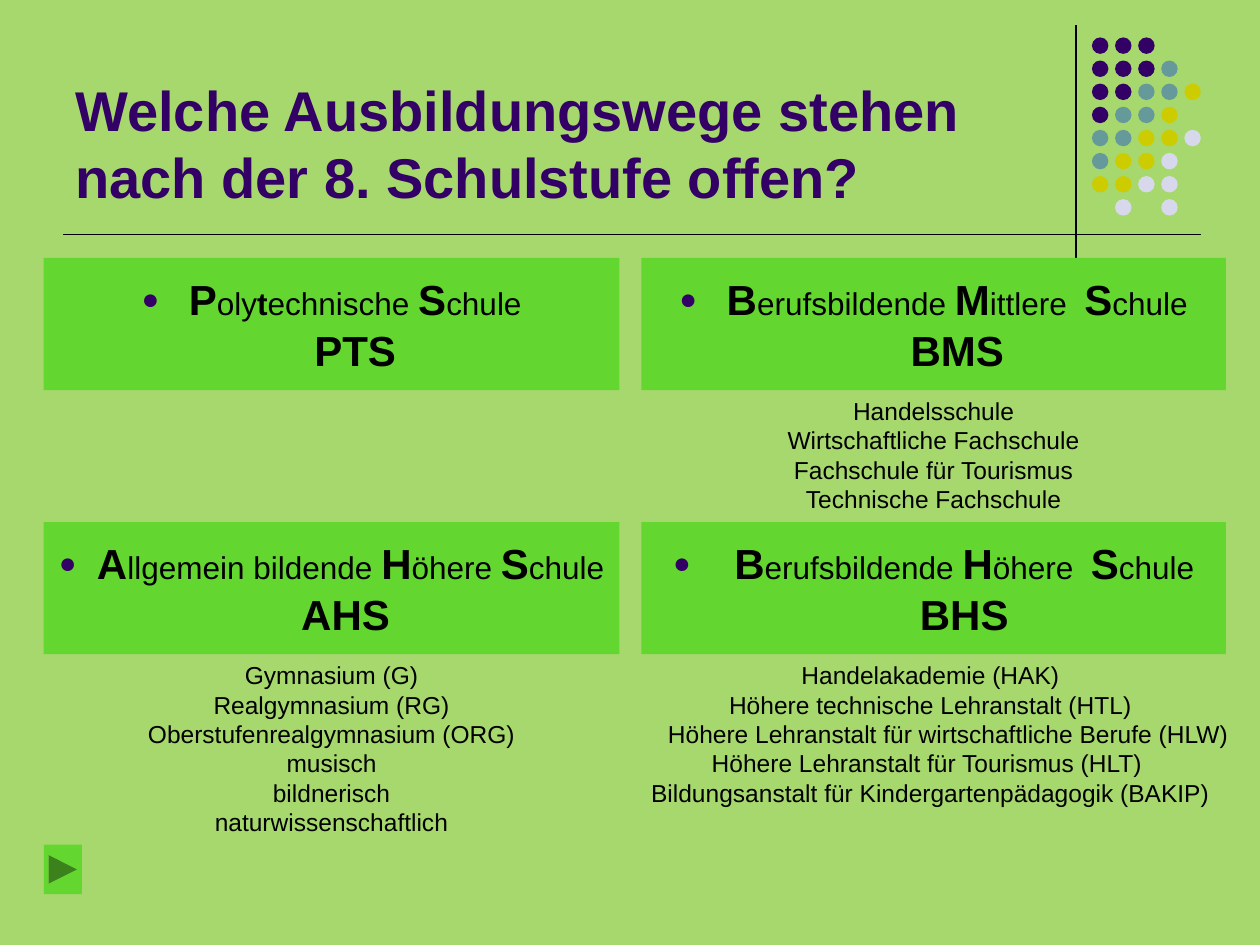
import copy
import pptx
import pptx.dml.color
import pptx.enum.shapes
import pptx.enum.text
import pptx.oxml
import pptx.oxml.ns
import pptx.util
from lxml import etree

Pt = pptx.util.Pt
Shape = pptx.enum.shapes.MSO_SHAPE
Align = pptx.enum.text.PP_ALIGN
Anchor = pptx.enum.text.MSO_ANCHOR
qn = pptx.oxml.ns.qn
GREEN, DARK, BLACK = "63D72F", "330066", "000000"


def tint(part, color):
    """Give a fill, font or line one solid colour."""
    if hasattr(part, "solid"):
        part.solid()
    target = part.fore_color if hasattr(part, "fore_color") else part.color
    target.rgb = pptx.dml.color.RGBColor.from_string(color)


def write(para, text, size, bold=False, color=BLACK):
    """Add a run; each newline starts a new line in the paragraph."""
    for i, line in enumerate(text.split("\n")):
        if i:
            para.add_line_break()
            para._p[-1].append(copy.deepcopy(run._r.rPr))
        if line:
            run = para.add_run()
            run.text = line
            run.font.name = "Arial"
            run.font.size = Pt(size)
            run.font.bold = bold
            tint(run.font, color)


deck = pptx.Presentation()
deck.slide_width, deck.slide_height = Pt(720), Pt(540)
slide = deck.slides.add_slide(deck.slide_layouts[6])
tint(slide.background.fill, "A6D86E")
shapes = slide.shapes

# Crossing rules
for x1, y1, x2, y2 in [(614.9, 14.4, 614.9, 147.6), (36, 134, 686.2, 134)]:
    rule = shapes.add_connector(
        pptx.enum.shapes.MSO_CONNECTOR.STRAIGHT, Pt(x1), Pt(y1), Pt(x2), Pt(y2))
    rule.line.width = Pt(0.75)
    tint(rule.line, BLACK)
    etree.SubElement(rule._element.spPr, qn("a:effectLst"))

# Dot pattern: one letter a dot, a point for a gap
hues = {"d": DARK, "t": "669999", "y": "CCCC00", "l": "D8D8EC"}
rows = ["ddd", "dddt", "ddtty", "dtty", "ttyyl", "tyyl", "yyll", ".l.l"]
for r, row in enumerate(rows):
    for c, key in enumerate(row):
        if key in hues:
            dot = shapes.add_shape(Shape.OVAL, Pt(624 + 13.2 * c),
                                   Pt(21.4 + 13.2 * r), Pt(9.4), Pt(9.4))
            dot.shadow.inherit = False
            tint(dot.fill, hues[key])
            dot.line.fill.background()

# Title
title = shapes.add_textbox(Pt(36), Pt(9.4), Pt(569.5), Pt(113.8)).text_frame
title.word_wrap = True
title.vertical_anchor = Anchor.BOTTOM
write(title.paragraphs[0],
      "Welche Ausbildungswege stehen nach der 8. Schulstufe offen?", 32, True, DARK)

# School types: left, top, width, indent, then bold and plain parts in turn
left, right = (25, 329), (366.5, 334)
cards = [
    (right, 147.4, 27, ["B", "erufsbildende ", "M", "ittlere  ", "S", "chule\n", "BMS"]),
    (left, 147.4, 27, ["P", "oly", "t", "echnische ", "S", "chule\n", "PTS"]),
    (left, 298.3, 16, [" A", "llgemein bildende ", "H", "öhere ", "S", "chule\n", "AHS"]),
    (right, 298.3, 35, ["B", "erufsbildende ", "H", "öhere  ", "S", "chule\n", "BHS"]),
]
for (x, width), y, indent, parts in cards:
    card = shapes.add_shape(Shape.RECTANGLE, Pt(x), Pt(y), Pt(width), Pt(75.5))
    card.shadow.inherit = False
    tint(card.fill, GREEN)
    card.line.fill.background()
    card.text_frame.word_wrap = True
    card.text_frame.vertical_anchor = Anchor.MIDDLE
    para = card.text_frame.paragraphs[0]
    para.alignment = Align.CENTER
    props = para._p.get_or_add_pPr()
    props.set("marL", str(Pt(indent)))
    props.set("indent", str(-Pt(indent)))
    hue = etree.SubElement(props, qn("a:buClr"))
    etree.SubElement(hue, qn("a:srgbClr"), val=DARK)
    etree.SubElement(props, qn("a:buSzPct"), val="70000")
    etree.SubElement(props, qn("a:buFont"), typeface="Arial")
    etree.SubElement(props, qn("a:buChar"), char="●")
    for i, part in enumerate(parts):
        write(para, part, 24 if part.strip().isupper() else 18, i % 2 == 0)

# Forward button
button = shapes.add_shape(Shape.ACTION_BUTTON_FORWARD_OR_NEXT,
                          Pt(25), Pt(482.7), Pt(21.8), Pt(28.3))
button.shadow.inherit = False
tint(button.fill, GREEN)
button.line.fill.background()

# Schools of each type
mid, end = Align.CENTER, Align.RIGHT
lists = [
    (366.5, 222.7, 334, 74.3, [
        (mid, "Handelsschule\nWirtschaftliche Fachschule"),
        (mid, "Fachschule für Tourismus"),
        (mid, "Technische Fachschule")]),
    (25, 373.7, 329, 108, [
        (mid, "Gymnasium (G)\nRealgymnasium (RG)\nOberstufenrealgymnasium (ORG)\n"
              "musisch\nbildnerisch\nnaturwissenschaftlich")]),
    (354.2, 373.7, 355, 92, [
        (mid, "Handelakademie (HAK)"),
        (mid, "Höhere technische Lehranstalt (HTL)"),
        (end, "Höhere Lehranstalt für wirtschaftliche Berufe (HLW)"),
        (mid, "Höhere Lehranstalt für Tourismus (HLT) \n"
              "Bildungsanstalt für Kindergartenpädagogik (BAKIP)")]),
]
for x, y, width, height, paras in lists:
    frame = shapes.add_textbox(Pt(x), Pt(y), Pt(width), Pt(height)).text_frame
    frame.word_wrap = True
    for i, (align, text) in enumerate(paras):
        para = frame.add_paragraph() if i else frame.paragraphs[0]
        para.alignment = align
        write(para, text, 14)

deck.save("out.pptx")
